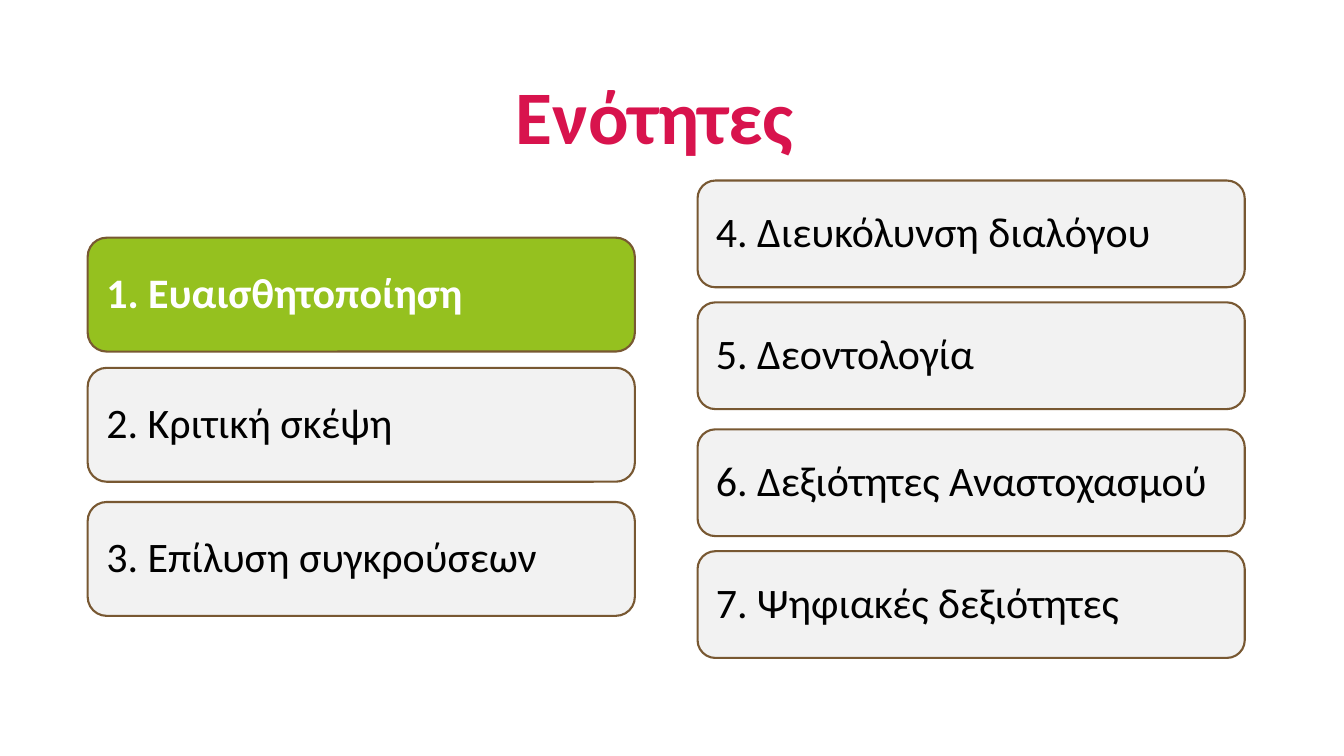
from pptx import Presentation
from pptx import util as u
from pptx.dml.color import RGBColor
from pptx.enum import shapes, text

# Content: (label, top in cm) for each unit
TITLE = "Ενότητες"
CURRENT = "1. Ευαισθητοποίηση"
COLUMNS = [
    {"left": 2.21, "height": 2.87, "units": [
        (CURRENT, 5.99),
        ("2. Κριτική σκέψη", 9.27),
        ("3. Επίλυση συγκρούσεων", 12.65)]},
    {"left": 17.58, "height": 2.69, "units": [
        ("4. Διευκόλυνση διαλόγου", 4.55),
        ("5. Δεοντολογία", 7.62),
        ("6. Δεξιότητες Αναστοχασμού", 10.82),
        ("7. Ψηφιακές δεξιότητες", 13.89)]},
]

# Format
CARD_WIDTH, CARD_INSET = 13.79, 0.33
TITLE_BOX = (0.03, -0.76, 32.94, 4.95)
TITLE_FONT = {"size": u.Pt(54), "bold": True}
UNIT_FONT = {"size": u.Pt(30), "bold": False}
CURRENT_FONT = {"size": u.Pt(30), "bold": True}
MARGINS = ("margin_left", "margin_top", "margin_right", "margin_bottom")


def color(target, hex_value):
    target.rgb = RGBColor.from_string(hex_value)


def write(sp, words, font, hex_value, align, anchor):
    tf = sp.text_frame
    tf.word_wrap = True
    tf.vertical_anchor = anchor
    p = tf.paragraphs[0]
    p.alignment, p.line_spacing = align, 0.9
    r = p.add_run()
    r.text = words
    for name, value in {"name": "Calibri", **font}.items():
        setattr(r.font, name, value)
    color(r.font.color, hex_value)


def add_card(s, words, left, top, height):
    sp = s.shapes.add_shape(shapes.MSO_SHAPE.ROUNDED_RECTANGLE,
                            *map(u.Cm, (left, top, CARD_WIDTH, height)))
    sp.shadow.inherit = False
    fill, font, ink = (("95C11F", CURRENT_FONT, "FFFFFF") if words == CURRENT
                       else ("F2F2F2", UNIT_FONT, "000000"))
    sp.fill.solid()
    color(sp.fill.fore_color, fill)
    color(sp.line.color, "785832")
    sp.line.width = u.Pt(1.5)
    for margin in MARGINS:
        setattr(sp.text_frame, margin, u.Cm(CARD_INSET))
    write(sp, words, font, ink, text.PP_ALIGN.LEFT, text.MSO_ANCHOR.MIDDLE)


def main():
    prs = Presentation()
    prs.slide_width, prs.slide_height = u.Cm(33.87), u.Cm(19.05)
    s = prs.slides.add_slide(prs.slide_layouts[6])

    # Title
    title = s.shapes.add_textbox(*map(u.Cm, TITLE_BOX))
    write(title, TITLE, TITLE_FONT, "D8134D",
          text.PP_ALIGN.CENTER, text.MSO_ANCHOR.BOTTOM)

    # Unit cards
    for column in COLUMNS:
        for words, top in column["units"]:
            add_card(s, words, column["left"], top, column["height"])

    prs.save("out.pptx")


if __name__ == "__main__":
    main()
